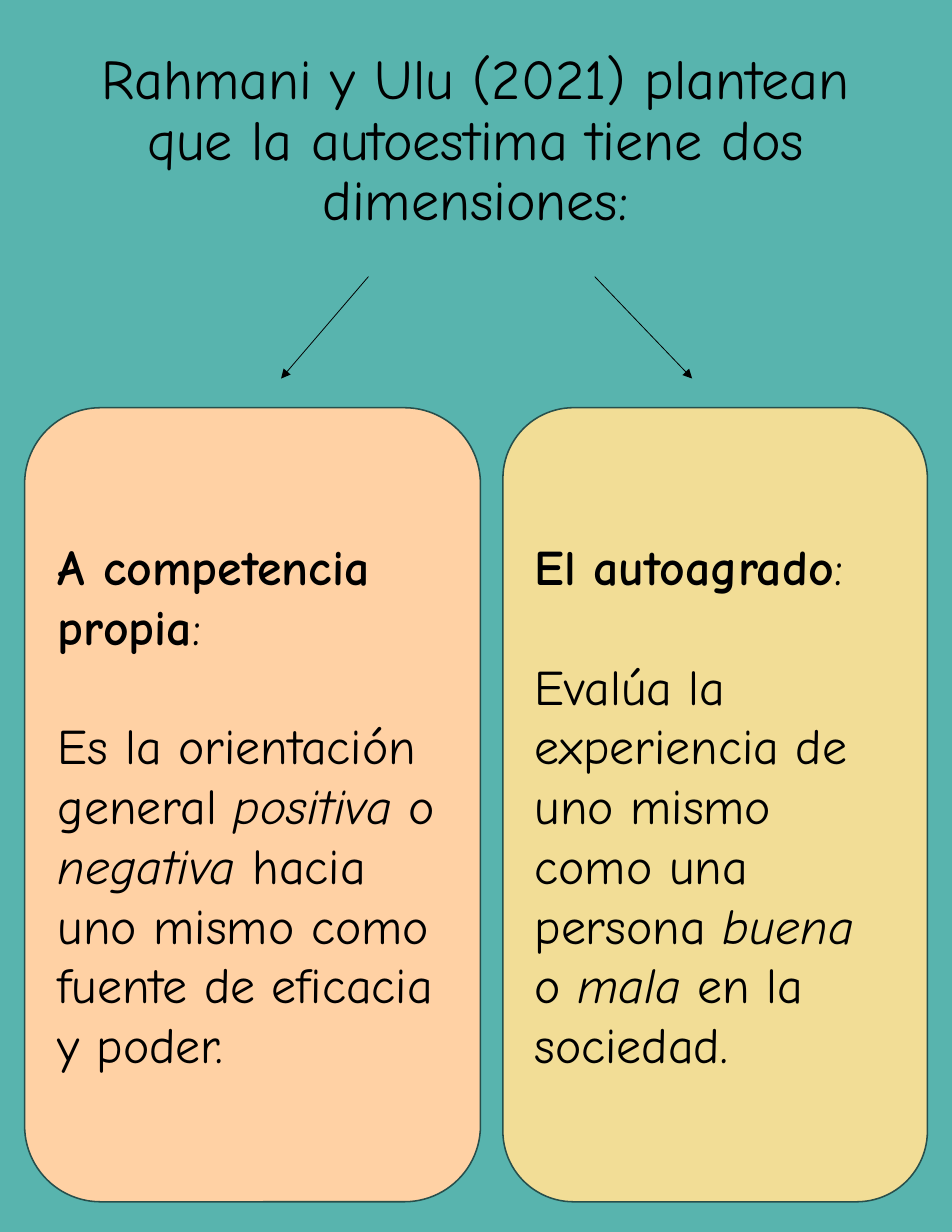
from lxml.etree import SubElement
from pptx import Presentation
from pptx.dml.color import RGBColor
from pptx.enum.shapes import MSO_CONNECTOR, MSO_SHAPE
from pptx.enum.text import MSO_ANCHOR, MSO_AUTO_SIZE, PP_ALIGN
from pptx.oxml.ns import qn
from pptx.util import Inches, Pt

FONT = "Comic Neue"
TEAL = RGBColor(0x58, 0xB4, 0xAE)
PEACH = RGBColor(0xFF, 0xD1, 0xA4)
YELLOW = RGBColor(0xF2, 0xDD, 0x96)
OUTLINE = RGBColor(0x27, 0x4F, 0x4C)
BLACK = RGBColor(0, 0, 0)

TITLE = "Rahmani y Ulu (2021) plantean que la autoestima tiene dos dimensiones:"
# Each run is (text, style): "b" bold, "i" italic, "" plain
CARDS = [
    dict(left=0.22, width=4.07, fill=PEACH, arrow=(3.29, 2.51), paragraphs=[
        [("A competencia propia", "b"), (":", "")],
        [("Es la orientación general ", ""), ("positiva", "i"), (" o ", ""),
         ("negativa", "i"),
         (" hacia uno mismo como fuente de eficacia y poder.", "")],
    ]),
    dict(left=4.49, width=3.79, fill=YELLOW, arrow=(5.31, 6.18), paragraphs=[
        [("El autoagrado", "b"), (": ", "")],
        [("Evalúa la experiencia de uno mismo como una persona ", ""),
         ("buena", "i"), (" o ", ""), ("mala", "i"),
         (" en la sociedad.", "")],
    ]),
]
CARD_TOP, CARD_HEIGHT = 3.64, 7.09
ARROW_TOP, ARROW_BOTTOM = 2.47, 3.38


def write(tf, paragraphs, size, align, anchor, line_spacing=1.0, gap=0):
    tf.word_wrap = True
    tf.auto_size = MSO_AUTO_SIZE.NONE
    tf.vertical_anchor = anchor
    for i, runs in enumerate(paragraphs):
        p = tf.add_paragraph() if i else tf.paragraphs[0]
        p.alignment = align
        p.line_spacing = line_spacing
        p.space_before = Pt(gap if i else 0)
        for text, style in runs:
            r = p.add_run()
            r.text = text
            r.font.name = FONT
            r.font.size = Pt(size)
            r.font.color.rgb = BLACK
            r.font.bold = style == "b"
            r.font.italic = style == "i"


def add_card(slide, card):
    sp = slide.shapes.add_shape(
        MSO_SHAPE.ROUNDED_RECTANGLE, Inches(card["left"]), Inches(CARD_TOP),
        Inches(card["width"]), Inches(CARD_HEIGHT))
    sp.shadow.inherit = False
    sp.fill.solid()
    sp.fill.fore_color.rgb = card["fill"]
    sp.line.color.rgb = OUTLINE
    sp.line.width = Pt(1)
    write(sp.text_frame, card["paragraphs"], size=32, align=PP_ALIGN.LEFT,
          anchor=MSO_ANCHOR.MIDDLE, gap=38.4)


def add_arrow(slide, x1, x2):
    line = slide.shapes.add_connector(
        MSO_CONNECTOR.STRAIGHT, Inches(x1), Inches(ARROW_TOP),
        Inches(x2), Inches(ARROW_BOTTOM))
    line.line.color.rgb = BLACK
    line.line.width = Pt(0.5)
    SubElement(line.line._get_or_add_ln(), qn("a:tailEnd"), type="triangle")
    SubElement(line._element.spPr, qn("a:effectLst"))


def main():
    prs = Presentation()
    prs.slide_width, prs.slide_height = Inches(8.5), Inches(11)
    slide = prs.slides.add_slide(prs.slide_layouts.get_by_name("Title Only"))
    slide.background.fill.solid()
    slide.background.fill.fore_color.rgb = TEAL

    title = slide.shapes.title
    title.left, title.top = Inches(0.58), Inches(0.75)
    title.width, title.height = Inches(7.33), Inches(1.38)
    write(title.text_frame, [[(TITLE, "")]], size=36, align=PP_ALIGN.CENTER,
          anchor=MSO_ANCHOR.BOTTOM, line_spacing=0.9)

    for card in CARDS:
        add_card(slide, card)
    for card in CARDS:
        add_arrow(slide, *card["arrow"])
    prs.save("out.pptx")


if __name__ == "__main__":
    main()
